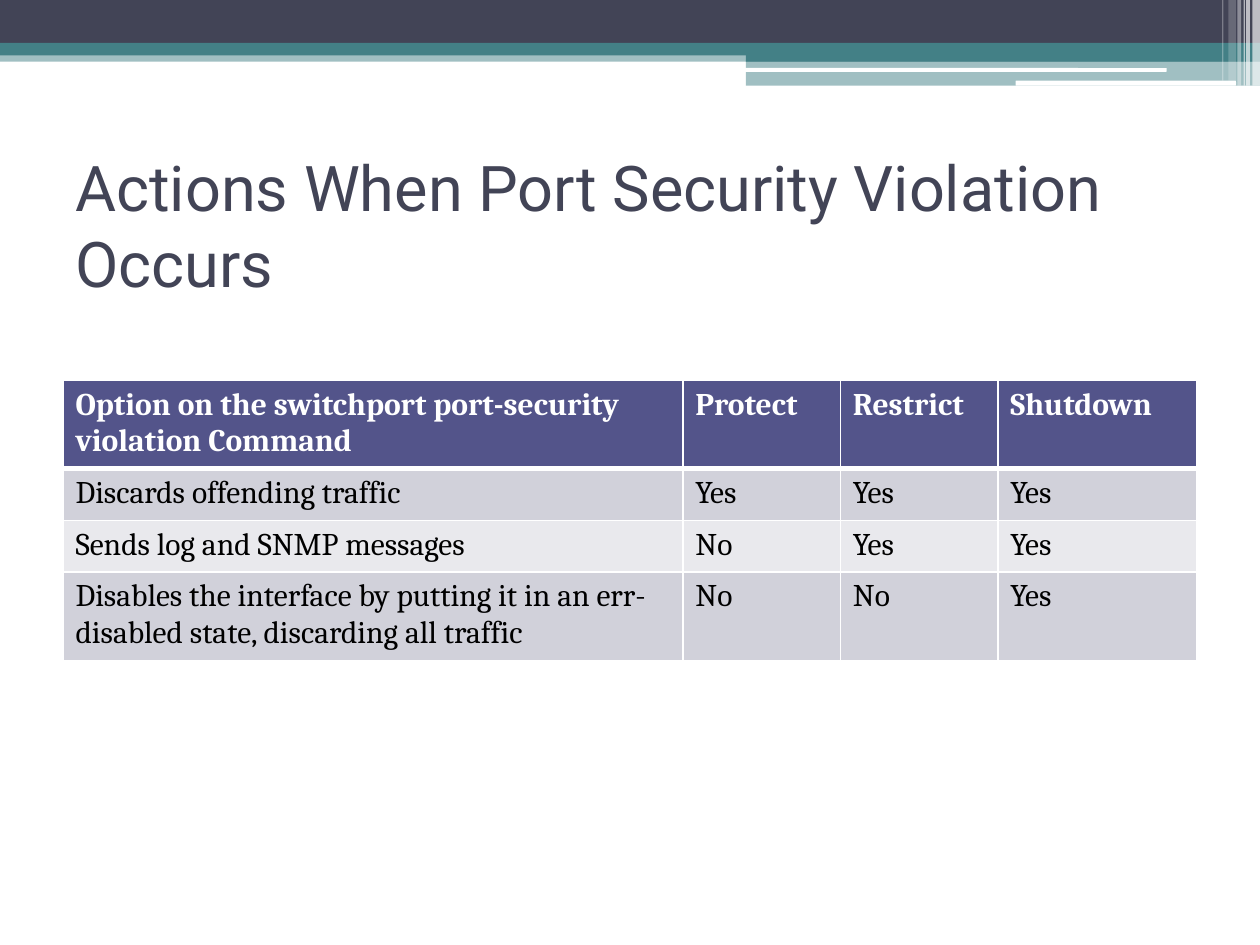
from lxml.etree import SubElement
from pptx import Presentation
from pptx.dml.color import RGBColor
from pptx.enum.shapes import MSO_SHAPE
from pptx.enum.text import MSO_ANCHOR
from pptx.oxml.ns import qn
from pptx.util import Inches, Pt

COLORS = {
    "white": "FFFFFF", "black": "000000", "slate": "424456", "teal": "438086",
    "head": "53548A", "odd": "D1D1DA", "even": "E9E9ED",
}
COLS, ROWS = 100, 75

BANDS = [
    (0, 4, 100, 0.9, "teal", 50),
    (0, 0, 100, 3.4, "slate", 100),
    (0, 3.4, 100, 1, "teal", 100),
    (59.2, 3.9, 40.8, 1, "teal", 100),
    (59.2, 4.8, 40.8, 2, "teal", 50),
]
LINES = [(59.1, 5.4, 33.5, 0.3), (80.6, 6.4, 17.5, 0.4)]
STRIPES = [
    (99.4, 0.6, 6.8, 65), (98.9, 0.3, 6.8, 65), (98.7, 0.1, 6.8, 60),
    (98.2, 0.3, 6.8, 40), (97.5, 0.6, 6.4, 20), (97, 0.1, 6.4, 30),
]
ACTIONS = [
    ["Option on the switchport port-security violation Command",
     "Protect", "Restrict", "Shutdown"],
    ["Discards offending traffic", "Yes", "Yes", "Yes"],
    ["Sends log and SNMP messages", "No", "Yes", "Yes"],
    ["Disables the interface by putting it in an err-disabled state, "
     "discarding all traffic", "No", "No", "Yes"],
]


def tint(name):
    return RGBColor.from_string(COLORS[name])


class Deck:
    def __init__(self):
        self.file = Presentation()
        self.file.slide_width, self.file.slide_height = Inches(10), Inches(7.5)
        self.slide = self.file.slides.add_slide(self.file.slide_layouts[6])

    def across(self, cols):
        return round(self.file.slide_width * cols / COLS)

    def down(self, rows):
        return round(self.file.slide_height * rows / ROWS)

    def box(self, left, top, width, height):
        return (self.across(left), self.down(top),
                self.across(width), self.down(height))

    def font(self, para, face, size, color, bold=False):
        font = para.font
        font.name, font.size, font.bold = face, Pt(size), bold
        font.color.rgb = tint(color)

    def block(self, left, top, width, height, color, alpha=100,
              kind=MSO_SHAPE.RECTANGLE):
        shape = self.slide.shapes.add_shape(
            kind, *self.box(left, top, width, height))
        shape.shadow.inherit = False
        shape.line.fill.background()
        shape.fill.solid()
        shape.fill.fore_color.rgb = tint(color)
        if alpha < 100:
            rgb = shape.fill._xPr.find(".//" + qn("a:srgbClr"))
            SubElement(rgb, qn("a:alpha"), val=str(alpha * 1000))

    def title(self, text, *place):
        frame = self.slide.shapes.add_textbox(*self.box(*place)).text_frame
        frame.word_wrap = True
        frame.vertical_anchor = MSO_ANCHOR.MIDDLE
        frame.text = text
        self.font(frame.paragraphs[0], "Roboto", 36, "slate")

    def edge(self, cell, side, width):
        line = SubElement(cell._tc.get_or_add_tcPr(), qn("a:" + side),
                          w=str(Pt(width)))
        fill = SubElement(line, qn("a:solidFill"))
        SubElement(fill, qn("a:srgbClr"), val=COLORS["white"])

    def cell(self, cell, text, row):
        head = row == 0
        cell.text = text
        self.font(cell.text_frame.paragraphs[0], "Cambria", 18,
                  "white" if head else "black", head)
        for side in ("lnL", "lnR", "lnT", "lnB"):
            thick = (head and side == "lnB") or (row == 1 and side == "lnT")
            self.edge(cell, side, 3 if thick else 1)
        cell.fill.solid()
        shade = "head" if head else "odd" if row % 2 else "even"
        cell.fill.fore_color.rgb = tint(shade)

    def table(self, data, left, top, widths, height):
        place = self.box(left, top, sum(widths), height * len(data))
        table = self.slide.shapes.add_table(
            len(data), len(widths), *place).table
        for col, width in zip(table.columns, widths):
            col.width = self.across(width)
        for row, texts in enumerate(data):
            for col, text in enumerate(texts):
                self.cell(table.cell(row, col), text, row)


def main():
    deck = Deck()
    for band in BANDS:
        deck.block(*band)
    for line in LINES:
        deck.block(*line, "white", kind=MSO_SHAPE.ROUNDED_RECTANGLE)
    for left, width, height, alpha in STRIPES:
        deck.block(left, 0, width, height, "white", alpha)
    deck.title("Actions When Port Security Violation Occurs",
               5, 12.5, 90, 10.6)
    deck.table(ACTIONS, 5, 30.2, (49.2, 12.5, 12.5, 15.8), 4.1)
    deck.file.save("out.pptx")


if __name__ == "__main__":
    main()
